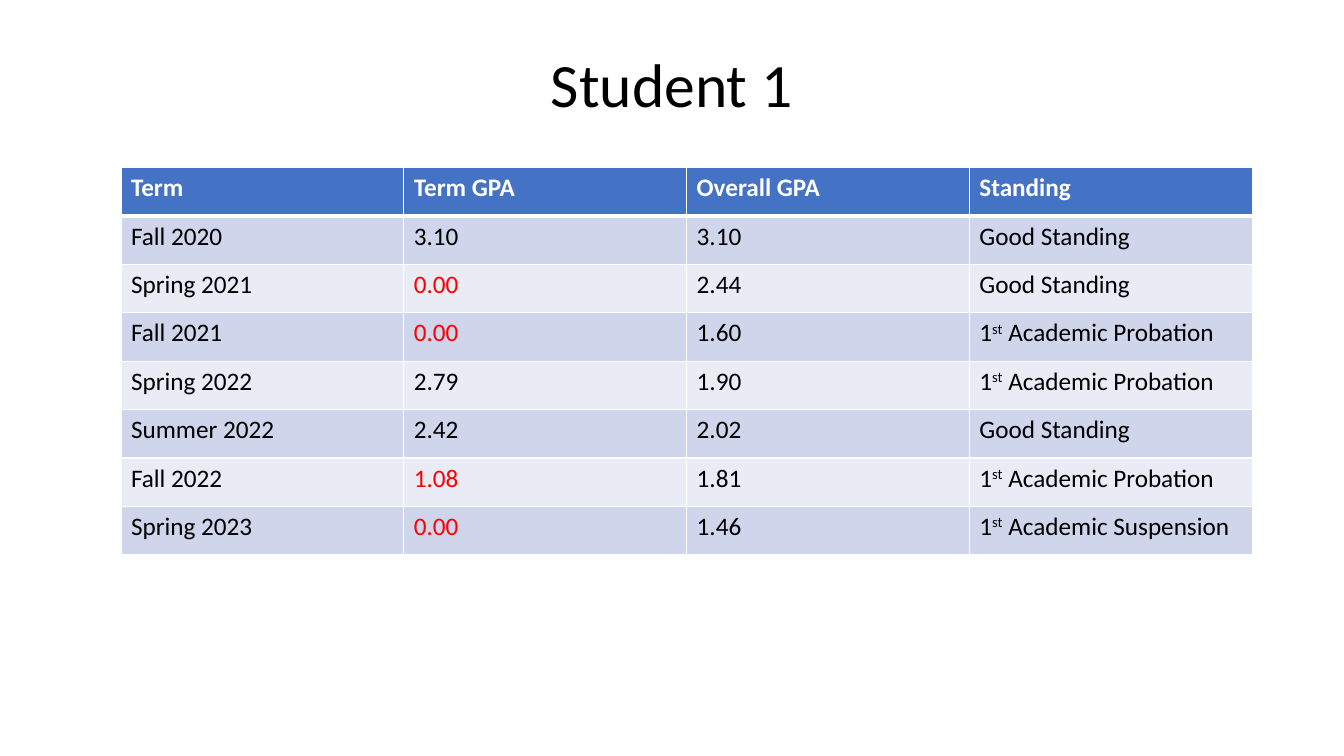
from lxml.etree import SubElement
from pptx import Presentation
from pptx.dml.color import RGBColor
from pptx.enum.text import MSO_ANCHOR, PP_ALIGN
from pptx.oxml.ns import qn
from pptx.util import Pt

# Content
TITLE = "Student 1"
HEADERS = ("Term", "Term GPA", "Overall GPA", "Standing")
TERMS = [
    ("Fall 2020", "3.10", "3.10", "Good Standing"),
    ("Spring 2021", "0.00", "2.44", "Good Standing"),
    ("Fall 2021", "0.00", "1.60", "1st Academic Probation"),
    ("Spring 2022", "2.79", "1.90", "1st Academic Probation"),
    ("Summer 2022", "2.42", "2.02", "Good Standing"),
    ("Fall 2022", "1.08", "1.81", "1st Academic Probation"),
    ("Spring 2023", "0.00", "1.46", "1st Academic Suspension"),
]
ORDINAL = "1st"
TERM_GPA_COL = 1
LOW_GPA = 2.0

# Style
FONT = "Calibri"
BLACK = RGBColor(0x00, 0x00, 0x00)
WHITE = RGBColor(0xFF, 0xFF, 0xFF)
RED = RGBColor(0xFF, 0x00, 0x00)
HEADER_BLUE = RGBColor(0x44, 0x72, 0xC4)
BANDS = (RGBColor(0xE9, 0xEB, 0xF5), RGBColor(0xCF, 0xD5, 0xEA))

# Geometry in points
TABLE_LEFT, TABLE_TOP = 86.4, 119.8
COL_WIDTH, ROW_HEIGHT = 202, 34.56


def style_run(r, size, color, bold=False):
    r.font.name = FONT
    r.font.size = Pt(size)
    r.font.bold = bold
    r.font.color.rgb = color


def set_borders(cell, widths):
    tc_pr = cell._tc.get_or_add_tcPr()
    for side, width in zip("LRTB", widths):
        ln = SubElement(tc_pr, qn(f"a:ln{side}"), w=str(Pt(width)))
        fill = SubElement(ln, qn("a:solidFill"))
        SubElement(fill, qn("a:srgbClr"), val=str(WHITE))


def fill_cell(cell, text, row, col):
    is_header = row == 0
    top = 3 if row == 1 else 1
    bottom = 3 if is_header else 1
    set_borders(cell, (1, 1, top, bottom))
    cell.fill.solid()
    cell.fill.fore_color.rgb = HEADER_BLUE if is_header else BANDS[row % 2]

    color = WHITE if is_header else BLACK
    if not is_header and col == TERM_GPA_COL and float(text) < LOW_GPA:
        color = RED
    # Raise the letters of an ordinal number
    if text.startswith(ORDINAL):
        parts = [("1", 0), ("st", 30000), (text[len(ORDINAL):], 0)]
    else:
        parts = [(text, 0)]
    p = cell.text_frame.paragraphs[0]
    for part, baseline in parts:
        r = p.add_run()
        r.text = part
        style_run(r, 18, color, is_header)
        if baseline:
            r._r.get_or_add_rPr().set("baseline", str(baseline))


prs = Presentation()
prs.slide_width, prs.slide_height = Pt(960), Pt(540)
s = prs.slides.add_slide(prs.slide_layouts[6])

# Title
sp = s.shapes.add_textbox(Pt(66), Pt(10), Pt(828), Pt(104.4))
tf = sp.text_frame
tf.word_wrap = True
tf.vertical_anchor = MSO_ANCHOR.MIDDLE
tf.text = TITLE
p = tf.paragraphs[0]
p.alignment = PP_ALIGN.CENTER
p.line_spacing = 0.9
style_run(p.runs[0], 44, BLACK)

# Table of terms
rows = [HEADERS] + TERMS
table = s.shapes.add_table(
    len(rows), len(HEADERS), Pt(TABLE_LEFT), Pt(TABLE_TOP),
    Pt(COL_WIDTH * len(HEADERS)), Pt(ROW_HEIGHT * len(rows))).table
for column in table.columns:
    column.width = Pt(COL_WIDTH)
for i, values in enumerate(rows):
    table.rows[i].height = Pt(ROW_HEIGHT)
    for j, value in enumerate(values):
        fill_cell(table.cell(i, j), value, i, j)

prs.save("out.pptx")
